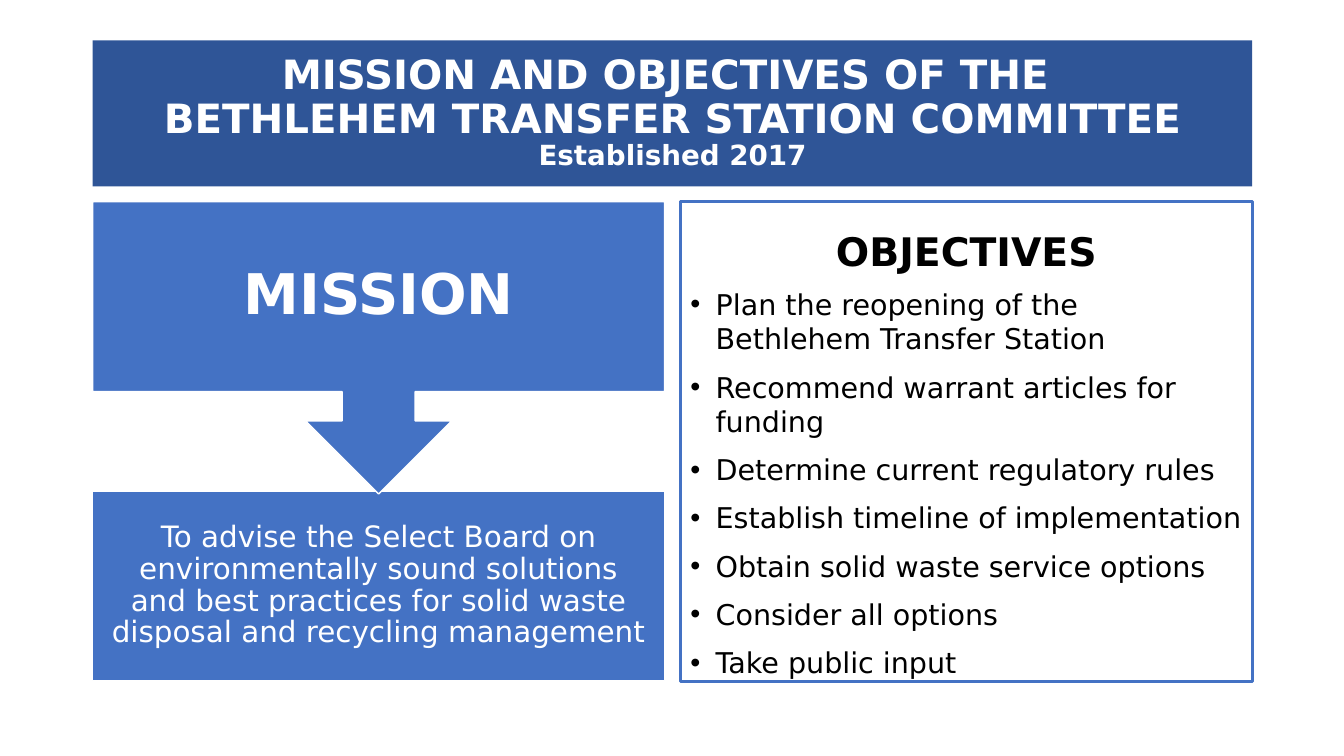
"""Build the mission and objectives slide."""
from pptx import Presentation
from pptx.dml.color import RGBColor
from pptx.enum.shapes import MSO_SHAPE as SHAPE
from pptx.enum.text import MSO_ANCHOR as ANCHOR, PP_ALIGN as ALIGN
from pptx.oxml.ns import qn
from pptx.util import Pt
from lxml import etree

PX = 9144
FONT = "DejaVu Sans"
NAVY = RGBColor(0x2F, 0x55, 0x97)
BLUE = RGBColor(0x44, 0x72, 0xC4)
WHITE = RGBColor(0xFF, 0xFF, 0xFF)
BLACK = RGBColor(0, 0, 0)
LEFT, RIGHT, TOP, COL_W, BOX_H = 92, 675, 200, 567, 188


def add_block(kind, x, y, w, h, fill=None, line=None, line_w=1, inset=(10, 5, 10, 5), anchor=ANCHOR.MIDDLE):
    sp = s.shapes.add_shape(kind, x * PX, y * PX, w * PX, h * PX)
    sp.shadow.inherit = False
    if fill is None:
        sp.fill.background()
    else:
        sp.fill.solid()
        sp.fill.fore_color.rgb = fill
    if line is None:
        sp.line.fill.background()
    else:
        sp.line.color.rgb = line
        sp.line.width = Pt(line_w)
    tf = sp.text_frame
    tf.word_wrap = True
    tf.vertical_anchor = anchor
    tf.margin_left, tf.margin_top, tf.margin_right, tf.margin_bottom = [m * PX for m in inset]
    return sp


def add_run(p, text, size, color, bold=False, align=ALIGN.CENTER, spacing=0.9):
    p.alignment = align
    p.line_spacing = spacing
    r = p.add_run()
    r.text = text
    r.font.name = FONT
    r.font.size = Pt(size)
    r.font.bold = bold
    r.font.color.rgb = color


prs = Presentation()
prs.slide_width, prs.slide_height = 1333 * PX, 750 * PX
s = prs.slides.add_slide(prs.slide_layouts[6])

title = add_block(SHAPE.RECTANGLE, LEFT, 40, 1150, 145, NAVY)
p = title.text_frame.paragraphs[0]
for text, size in [("MISSION AND OBJECTIVES OF THE ", 28.8),
                   ("BETHLEHEM TRANSFER STATION COMMITTEE", 28.8)]:
    add_run(p, text, size, WHITE, True)
    p.add_line_break()
add_run(p, "Established 2017", 19.8, WHITE, True)

advice = add_block(SHAPE.RECTANGLE, LEFT, 487, COL_W, BOX_H, BLUE, WHITE, inset=(16,) * 4)
add_run(advice.text_frame.paragraphs[0],
        "To advise the Select Board on environmentally sound solutions and best practices "
        "for solid waste disposal and recycling management", 21, WHITE)

callout = add_block(SHAPE.UP_ARROW_CALLOUT, LEFT, TOP, COL_W, 290, BLUE, WHITE)
callout.rotation = 180
mission = add_block(SHAPE.RECTANGLE, LEFT, TOP, COL_W, BOX_H, inset=(31,) * 4)
add_run(mission.text_frame.paragraphs[0], "MISSION", 40, WHITE, True)

objectives = add_block(SHAPE.RECTANGLE, RIGHT, TOP, COL_W, 476, line=BLUE, line_w=2.25,
                       inset=(10, 38, 10, 5), anchor=ANCHOR.TOP)
tf = objectives.text_frame
add_run(tf.paragraphs[0], "OBJECTIVES", 28.1, BLACK, True, spacing=0.7)
for goal in ["Plan the reopening of the Bethlehem Transfer Station",
             "Recommend warrant articles for funding",
             "Determine current regulatory rules",
             "Establish timeline of implementation",
             "Obtain solid waste service options",
             "Consider all options",
             "Take public input"]:
    p = tf.add_paragraph()
    add_run(p, goal, 20.4, BLACK, align=ALIGN.LEFT, spacing=1.0)
    p.space_before = Pt(10)
    pPr = p._p.get_or_add_pPr()
    pPr.set("marL", str(25 * PX))
    pPr.set("indent", str(-25 * PX))
    etree.SubElement(pPr, qn("a:buFont"), typeface="Arial")
    etree.SubElement(pPr, qn("a:buChar"), char="•")

prs.save("out.pptx")
